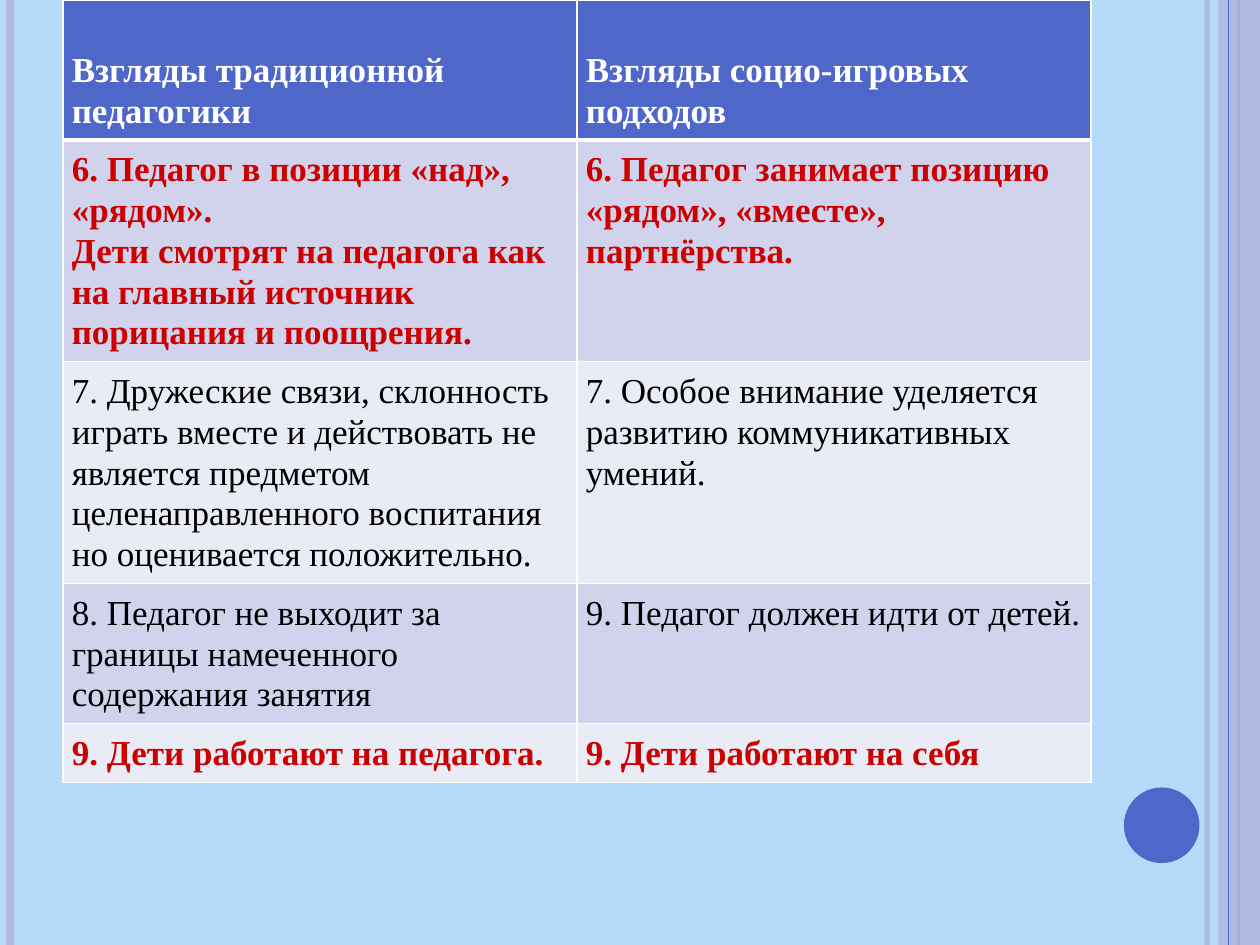
from dataclasses import dataclass

from lxml.etree import SubElement
from pptx import Presentation
from pptx.dml.color import RGBColor
from pptx.enum.shapes import MSO_CONNECTOR, MSO_SHAPE
from pptx.enum.text import MSO_ANCHOR
from pptx.oxml.ns import qn
from pptx.util import Inches, Pt


@dataclass(frozen=True)
class Theme:
    sky: str = "B4DCFA"
    blue: str = "4E67C8"
    lilac: str = "B2B8E0"
    band_dark: str = "D0D3EB"
    band_light: str = "E9EBF5"
    white: str = "FFFFFF"
    black: str = "000000"
    red: str = "CC0000"
    font: str = "Times New Roman"
    size: int = 20


theme = Theme()


def write_text(tf, text, *, color=theme.black, bold=False):
    p = tf.paragraphs[0]
    p.text = text
    p.line_spacing = 1.05
    p.space_after = Pt(10)
    for r in p.runs:
        r.font.name = theme.font
        r.font.size = Pt(theme.size)
        r.font.bold = bold
        r.font.color.rgb = RGBColor.from_string(color)


def paint(fill, color, opacity=100):
    fill.solid()
    fill.fore_color.rgb = RGBColor.from_string(color)
    if opacity < 100:
        clr = fill._xPr.find(qn("a:solidFill"))[0]
        SubElement(clr, qn("a:alpha"), val=str(opacity * 1000))


prs = Presentation()
prs.slide_width, prs.slide_height = Inches(10), Inches(7.5)
s = prs.slides.add_slide(prs.slide_layouts[6])
paint(s.background.fill, theme.sky)

# Vertical stripes: x, colour, width, opacity; the last one lies over the side band
stripes = [
    (9.58, theme.lilac, 3, 93),
    (0.08, theme.lilac, 4.5, 100),
    (9.83, theme.blue, 1.5, 100),
    (9.75, theme.blue, 0.75, 100),
]
for i, (x, color, width, opacity) in enumerate(stripes):
    if i == len(stripes) - 1:
        sp = s.shapes.add_shape(MSO_SHAPE.RECTANGLE, Inches(9.67), 0, Inches(0.33), Inches(7.5))
        sp.shadow.inherit = False
        sp.line.fill.background()
        paint(sp.fill, theme.lilac, 87)
    line = s.shapes.add_connector(MSO_CONNECTOR.STRAIGHT, Inches(x), 0, Inches(x), Inches(7.5))
    line.line.width = Pt(width)
    paint(line.line.fill, color, opacity)
    SubElement(line._element.spPr, qn("a:effectLst"))

# Corner circle
sp = s.shapes.add_shape(MSO_SHAPE.OVAL, Inches(8.92), Inches(6.25), Inches(0.6), Inches(0.6))
sp.shadow.inherit = False
sp.line.fill.background()
paint(sp.fill, theme.blue)

# Comparison table: height, fill, text colour, bold, the two views
rows = [
    (1.11, theme.blue, theme.white, True,
     "Взгляды традиционной педагогики",
     "Взгляды социо-игровых подходов"),
    (1.76, theme.band_dark, theme.red, True,
     "6. Педагог в позиции «над», «рядом».\vДети смотрят на педагога как "
     "на главный источник порицания и поощрения.",
     "6. Педагог занимает позицию «рядом», «вместе», партнёрства."),
    (1.76, theme.band_light, theme.black, False,
     "7. Дружеские связи, склонность играть вместе и действовать не является "
     "предметом целенаправленного воспитания но оценивается положительно.",
     "7. Особое внимание уделяется развитию коммуникативных умений."),
    (1.11, theme.band_dark, theme.black, False,
     "8. Педагог не выходит за границы намеченного содержания занятия",
     "9. Педагог должен идти от детей."),
    (0.47, theme.band_light, theme.red, True,
     "9. Дети работают на педагога.",
     "9. Дети работают на себя"),
]
height = sum(row[0] for row in rows)
table = s.shapes.add_table(len(rows), 2, Inches(0.5), 0, Inches(8.17), Inches(height)).table
table.horz_banding = False
for col in table.columns:
    col.width = Inches(4.08)

for i, (row_height, fill, color, bold, *views) in enumerate(rows):
    table.rows[i].height = Inches(row_height)
    for j, view in enumerate(views):
        cell = table.cell(i, j)
        cell.margin_left = cell.margin_right = Inches(0.07)
        cell.margin_top = cell.margin_bottom = Inches(0.07)
        cell.vertical_anchor = MSO_ANCHOR.BOTTOM if i == 0 else MSO_ANCHOR.TOP
        write_text(cell.text_frame, view, color=color, bold=bold)
        # White borders, thicker under the header
        for side in ("L", "R", "T", "B"):
            thick = (i, side) in ((0, "B"), (1, "T"))
            ln = SubElement(cell._tc.get_or_add_tcPr(), qn(f"a:ln{side}"), w=str(Pt(3 if thick else 1)))
            SubElement(SubElement(ln, qn("a:solidFill")), qn("a:srgbClr"), val=theme.white)
        paint(cell.fill, fill)

prs.save("out.pptx")
